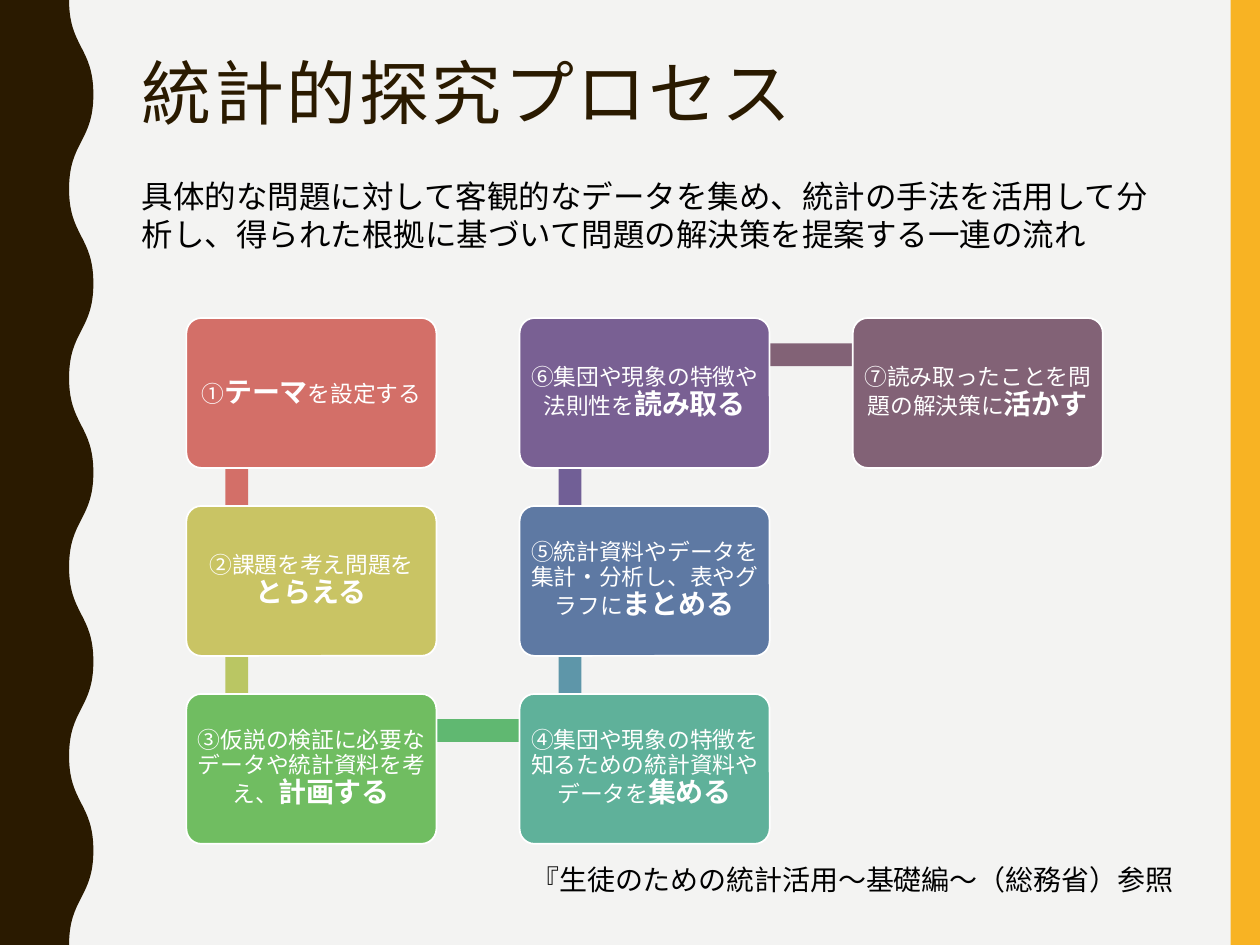
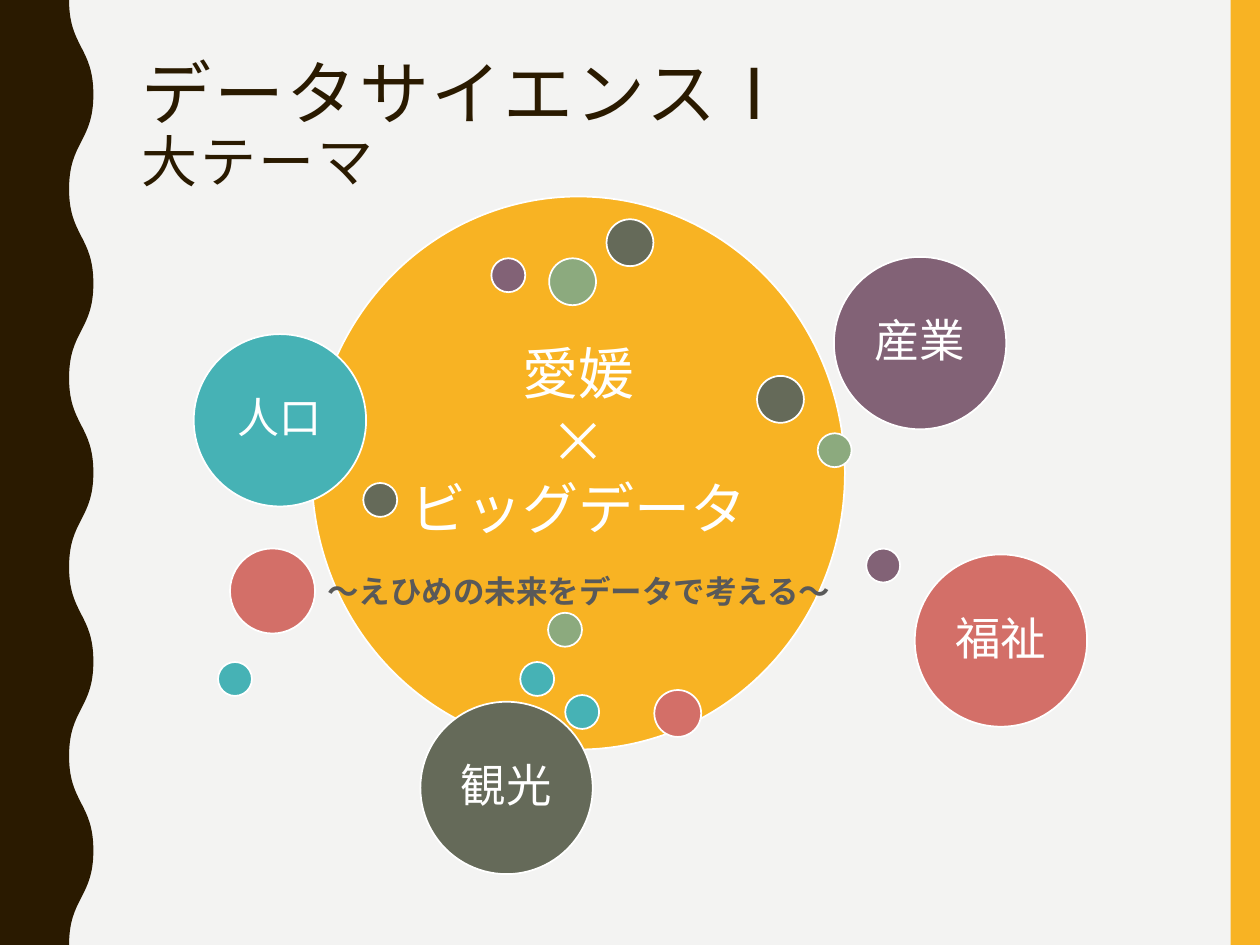
from itertools import pairwise

from lxml import etree
from pptx import Presentation
from pptx.dml.color import RGBColor as Rgb
from pptx.enum.shapes import MSO_SHAPE as Preset
from pptx.enum.text import MSO_ANCHOR as Anchor, PP_ALIGN as Align
from pptx.oxml.ns import qn
from pptx.util import Pt

SLIDE_W, SLIDE_H = 720, 540
COLOURS = {
    "paper": "F3F3F2", "brown": "2A1A00", "amber": "F8B323", "white": "FFFFFF",
    "black": "000000", "grey": "595959", "coral": "D36F68", "teal": "46B2B5",
    "plum": "826276", "sage": "8CAA7E", "moss": "656A59", "mustard": "C9C464",
    "green": "70BD61", "jade": "5FB19A", "blue": "5E79A3", "violet": "796093",
    "lime": "BAC663", "leaf": "60B871", "lagoon": "5E96A9", "indigo": "715F96",
}
TITLE = {"name": "Arial Narrow", "size": Pt(40)}
SUBTITLE = TITLE | {"size": Pt(32)}
BODY = {"name": "Calibri", "size": Pt(18)}
SOURCE = BODY | {"size": Pt(16)}
TAGLINE = BODY | {"bold": True}
STEP = BODY | {"size": Pt(13)}
STEP_KEY = BODY | {"size": Pt(16), "bold": True}
CORE = {"name": "Noto Sans CJK JP", "size": Pt(32)}
TEXT_LEFT, TEXT_W = 73.8, 601.2

# Column, row, card colour, colour of the link to the next step, wording
STEPS = [
    (0, 0, "coral", "coral", [("①", STEP), ("テーマ", STEP_KEY), ("を設定する", STEP)]),
    (0, 1, "mustard", "lime", [("②課題を考え問題を", STEP), ("とらえる", STEP_KEY)]),
    (0, 2, "green", "leaf",
     [("③仮説の検証に必要なデータや統計資料を考え、", STEP), ("計画する", STEP_KEY)]),
    (1, 2, "jade", "lagoon",
     [("④集団や現象の特徴を知るための統計資料やデータを", STEP), ("集める", STEP_KEY)]),
    (1, 1, "blue", "indigo",
     [("⑤統計資料やデータを集計・分析し、表やグラフに", STEP), ("まとめる", STEP_KEY)]),
    (1, 0, "violet", "plum",
     [("⑥集団や現象の特徴や法則性を", STEP), ("読み取る", STEP_KEY)]),
    (2, 0, "plum", None,
     [("⑦読み取ったことを問題の解決策に", STEP), ("活かす", STEP_KEY)]),
]
CARD_LEFT, CARD_TOP, CARD_W, CARD_H = 106.5, 181.7, 142.9, 85.7
COLUMN_STEP, ROW_STEP = 190.4, 107.4
LINK_X, LINK_Y, LINK_THICK = 28.8, 21, 13

THEME_SIZE = 98.5
THEMES = [
    ("人口", 24, "teal", 110.7, 190.9), ("産業", 26, "plum", 476.5, 146.8),
    ("福祉", 26, "coral", 522.7, 316.8), ("観光", 26, "moss", 240.2, 401),
]
# Diameter: (colour, left, top)
DOTS = {
    19.4: [
        ("teal", 297.3, 378.3), ("sage", 467.3, 247.6), ("plum", 280.8, 147.6),
        ("moss", 207.6, 276), ("teal", 124.6, 378.3), ("sage", 313.2, 350.2),
        ("plum", 495, 313.5), ("teal", 323, 397.2),
    ],
    26.8: [
        ("moss", 346.6, 125.3), ("coral", 373.9, 394.3), ("sage", 313.8, 147.6),
        ("moss", 432.6, 214.8),
    ],
    48.6: [("coral", 131.4, 313.4)],
}


def rgb(colour):
    return Rgb.from_string(COLOURS[colour])


def paint(shape, fill, outline=None):
    shape.shadow.inherit = False
    shape.fill.solid()
    shape.fill.fore_color.rgb = rgb(fill)
    if outline:
        shape.line.color.rgb = rgb(outline)
        shape.line.width = Pt(1)
    else:
        shape.line.fill.background()


def add_preset(slide, preset, box, fill, outline=None):
    shape = slide.shapes.add_shape(preset, *map(Pt, box))
    paint(shape, fill, outline)
    return shape


def add_runs(paragraph, parts, colour, tracking=None):
    """Append (text, font values) parts; tracking is in hundredths of a point."""
    for text, values in parts:
        run = paragraph.add_run()
        run.text = text
        for attribute, value in values.items():
            setattr(run.font, attribute, value)
        run.font.color.rgb = rgb(colour)
        if tracking:
            run._r.get_or_add_rPr().set("spc", str(tracking))


def add_label(shape, lines, inset, spacing=None, bottom=None):
    """Centre white lines in a shape; a larger bottom inset lifts them."""
    frame = shape.text_frame
    frame_format = {
        "word_wrap": True, "vertical_anchor": Anchor.MIDDLE,
        "margin_left": Pt(inset), "margin_right": Pt(inset), "margin_top": Pt(inset),
        "margin_bottom": Pt(inset if bottom is None else bottom),
    }
    for attribute, value in frame_format.items():
        setattr(frame, attribute, value)
    for number, parts in enumerate(lines):
        paragraph = frame.add_paragraph() if number else frame.paragraphs[0]
        paragraph.alignment = Align.CENTER
        paragraph.line_spacing = spacing
        add_runs(paragraph, parts, "white")


def add_text(slide, box, text, values, colour, wrap=True):
    frame = slide.shapes.add_textbox(*map(Pt, box)).text_frame
    frame.word_wrap = wrap
    add_runs(frame.paragraphs[0], [(text, values)], colour)


def add_title(slide, height, title, subtitle=None):
    box = (TEXT_LEFT, 30.2, TEXT_W, height)
    frame = slide.shapes.add_textbox(*map(Pt, box)).text_frame
    frame.word_wrap = True
    paragraph = frame.paragraphs[0]
    paragraph.line_spacing = 0.9
    add_runs(paragraph, [(title, TITLE)], "brown", 150)
    if subtitle:
        paragraph.add_line_break()
        add_runs(paragraph, [(subtitle, SUBTITLE)], "brown", 150)


def bend(line, start, end):
    """Turn a straight freeform segment into an S-curve, upright at both ends."""
    middle = (start[1] + end[1]) / 2
    line.tag = qn("a:cubicBezTo")
    line.clear()
    for x, y in ((start[0], middle), (end[0], middle), end):
        etree.SubElement(line, qn("a:pt"), x=str(Pt(x)), y=str(Pt(y)))


def add_wavy_band(slide, trough=39.5, crest=53.4, half_wave=54):
    """Brown left band whose edge swings between trough and crest."""
    edge = [(crest if half % 2 else trough, half * half_wave)
            for half in range(SLIDE_H // half_wave + 1)]
    outline = slide.shapes.build_freeform(Pt(trough), 0)
    corners = [*edge[1:], (0, SLIDE_H), (0, 0)]
    outline.add_line_segments([(Pt(x), Pt(y)) for x, y in corners], close=True)
    band = outline.convert_to_shape()
    paint(band, "brown")
    lines = list(band._element.iter(qn("a:lnTo")))
    for line, (start, end) in zip(lines, pairwise(edge)):
        curve = etree.Element(qn("a:cubicBezTo"))
        line.getparent().replace(line, curve)
        bend(curve, start, end)


def add_themed_slide(deck):
    slide = deck.slides.add_slide(deck.slide_layouts[6])
    slide.background.fill.solid()
    slide.background.fill.fore_color.rgb = rgb("paper")
    add_preset(slide, Preset.RECTANGLE, (703.2, 0, 16.8, SLIDE_H), "amber")
    add_wavy_band(slide)
    return slide


def card_corner(step):
    column, row = step[:2]
    return CARD_LEFT + column * COLUMN_STEP, CARD_TOP + row * ROW_STEP


def add_link(slide, step, following):
    """Bar between the link points of two neighbouring cards."""
    (x1, y1), (x2, y2) = card_corner(step), card_corner(following)
    box = (min(x1, x2) + LINK_X - LINK_THICK / 2, min(y1, y2) + LINK_Y - LINK_THICK / 2,
           abs(x2 - x1) + LINK_THICK, abs(y2 - y1) + LINK_THICK)
    add_preset(slide, Preset.RECTANGLE, box, step[3])


def add_step_card(slide, step):
    box = (*card_corner(step), CARD_W, CARD_H)
    card = add_preset(slide, Preset.ROUNDED_RECTANGLE, box, step[2], "white")
    card.adjustments[0] = 0.1
    add_label(card, [step[4]], 3.3, 0.9)


def add_circle(slide, left, top, size, fill):
    return add_preset(slide, Preset.OVAL, (left, top, size, size), fill, "white")


def build_process_slide(deck):
    slide = add_themed_slide(deck)
    add_title(slide, 46.8, "統計的探究プロセス")
    for step, following in pairwise(STEPS):
        add_link(slide, step, following)
    for step in STEPS:
        add_step_card(slide, step)
    add_text(slide, (TEXT_LEFT, 97.6, TEXT_W, 51.1),
             "具体的な問題に対して客観的なデータを集め、統計の手法を活用して分析し、"
             "得られた根拠に基づいて問題の解決策を提案する一連の流れ", BODY, "black")
    add_text(slide, (296.6, 489.2, 385.9, 26.6),
             "『生徒のための統計活用～基礎編～（総務省）参照", SOURCE, "black", wrap=False)


def build_theme_slide(deck):
    slide = add_themed_slide(deck)
    add_title(slide, 117.4, "データサイエンスⅠ", "大テーマ")
    core = add_preset(slide, Preset.OVAL, (178.2, 112.3, 304.6, 316), "amber", "white")
    core_lines = [[(line, CORE)] for line in ("愛媛", "×", "ビッグデータ")]
    add_label(core, core_lines, 0, bottom=38)
    for name, size, colour, left, top in THEMES:
        theme = add_circle(slide, left, top, THEME_SIZE, colour)
        add_label(theme, [[(name, BODY | {"size": Pt(size)})]], 7.5, 0.9)
    for size, dots in DOTS.items():
        for colour, left, top in dots:
            add_circle(slide, left, top, size, colour)
    add_text(slide, (180, 323.3, 305.3, 28.8),
             "～えひめの未来をデータで考える～", TAGLINE, "grey", wrap=False)


def main():
    deck = Presentation()
    deck.slide_width, deck.slide_height = Pt(SLIDE_W), Pt(SLIDE_H)
    build_process_slide(deck)
    build_theme_slide(deck)
    deck.save("out.pptx")


if __name__ == "__main__":
    main()
